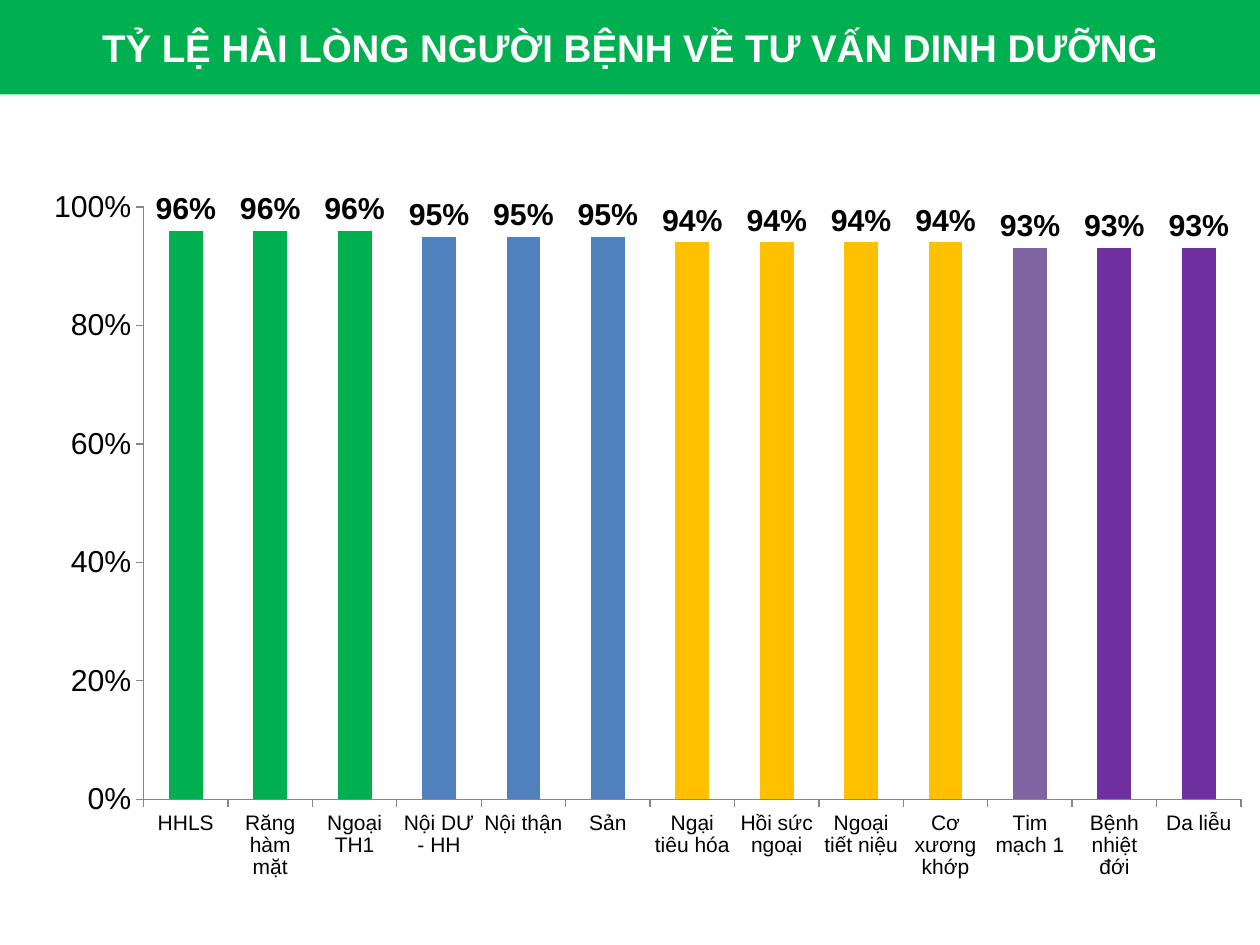
from lxml import etree
from pptx import Presentation
from pptx.chart.data import CategoryChartData
from pptx.dml.color import RGBColor
from pptx.enum.chart import XL_CHART_TYPE, XL_LABEL_POSITION, XL_TICK_MARK
from pptx.enum.text import MSO_ANCHOR, PP_ALIGN
from pptx.oxml.ns import qn
from pptx.util import Inches, Pt

TITLE = "TỶ LỆ HÀI LÒNG NGƯỜI BỆNH VỀ TƯ VẤN DINH DƯỠNG"
COLORS = {
    "green": "00B050", "blue": "4F81BD", "amber": "FFC000", "mauve": "8064A2",
    "purple": "7030A0", "white": "FFFFFF", "black": "000000", "axis": "868686",
}
DEPARTMENTS = [
    ("HHLS", 0.96, "green"),
    ("Răng hàm mặt", 0.96, "green"),
    ("Ngoại TH1", 0.96, "green"),
    ("Nội DƯ - HH", 0.95, "blue"),
    ("Nội thận", 0.95, "blue"),
    ("Sản", 0.95, "blue"),
    ("Ngại tiêu hóa", 0.94, "amber"),
    ("Hồi sức ngoại", 0.94, "amber"),
    ("Ngoại tiết niệu", 0.94, "amber"),
    ("Cơ xương khớp", 0.94, "amber"),
    ("Tim mạch 1", 0.93, "mauve"),
    ("Bệnh nhiệt đới", 0.93, "purple"),
    ("Da liễu", 0.93, "purple"),
]
PLOT_AREA = {"x": 0.114, "y": 0.07, "w": 0.871, "h": 0.797}
FONT = "Arial"


def color(name):
    return RGBColor.from_string(COLORS[name])


def set_font(font, size, color_name, bold=False, name=FONT):
    font.name, font.size, font.bold = name, Pt(size), bold
    font.color.rgb = color(color_name)


def fill_solid(target, color_name):
    target.fill.solid()
    target.fill.fore_color.rgb = color(color_name)


def add_title(slide):
    title = slide.shapes.title
    title.left, title.top = Inches(0), Inches(0)
    title.width, title.height = Inches(10), Inches(0.75)
    fill_solid(title, "green")
    title.text_frame.text = TITLE
    title.text_frame.word_wrap = True
    title.text_frame.vertical_anchor = MSO_ANCHOR.MIDDLE
    paragraph = title.text_frame.paragraphs[0]
    paragraph.alignment = PP_ALIGN.CENTER
    set_font(paragraph.font, 22, "white", bold=True)


def format_axis(axis, size):
    axis.has_major_gridlines = False
    axis.major_tick_mark = XL_TICK_MARK.OUTSIDE
    axis.minor_tick_mark = XL_TICK_MARK.NONE
    axis.format.line.color.rgb = color("axis")
    axis.format.line.width = Pt(0.75)
    set_font(axis.tick_labels.font, size, "black")


def place_plot_area(chart):
    """Fix the inner plot area as fractions of the chart frame."""
    plot_area = chart.element.find(".//" + qn("c:plotArea"))
    layout = plot_area.find(qn("c:layout"))
    if layout is None:
        layout = etree.Element(qn("c:layout"))
        plot_area.insert(0, layout)
    manual = etree.SubElement(layout, qn("c:manualLayout"))
    settings = {"layoutTarget": "inner", "xMode": "edge", "yMode": "edge", **PLOT_AREA}
    for tag, value in settings.items():
        etree.SubElement(manual, qn("c:" + tag)).set("val", str(value))


def add_satisfaction_chart(slide):
    data = CategoryChartData(number_format="0%")
    data.categories = [name for name, _, _ in DEPARTMENTS]
    data.add_series("Series 1", [rate for _, rate, _ in DEPARTMENTS])
    chart = slide.shapes.add_chart(
        XL_CHART_TYPE.COLUMN_CLUSTERED,
        Inches(0), Inches(1.23), Inches(10), Inches(5.9), data,
    ).chart
    chart.has_legend = False
    chart.has_title = False
    set_font(chart.font, 17.3, "black", name="Calibri")
    place_plot_area(chart)

    format_axis(chart.category_axis, 12)
    value_axis = chart.value_axis
    format_axis(value_axis, 17.3)
    value_axis.minimum_scale, value_axis.maximum_scale = 0, 1
    value_axis.major_unit = 0.2
    value_axis.tick_labels.number_format = "0%"
    value_axis.tick_labels.number_format_is_linked = False

    plot = chart.plots[0]
    plot.gap_width = 150
    plot.vary_by_categories = False
    series = plot.series[0]
    fill_solid(series.format, "blue")
    for index, (_, _, color_name) in enumerate(DEPARTMENTS):
        fill_solid(series.points[index].format, color_name)

    labels = series.data_labels
    labels.show_value = True
    labels.number_format = "0%"
    labels.number_format_is_linked = False
    labels.position = XL_LABEL_POSITION.OUTSIDE_END
    set_font(labels.font, 17.3, "black", bold=True)


def main():
    presentation = Presentation()
    presentation.slide_width, presentation.slide_height = Inches(10), Inches(7.5)
    slide = presentation.slides.add_slide(presentation.slide_layouts[5])
    add_title(slide)
    add_satisfaction_chart(slide)
    presentation.save("out.pptx")


if __name__ == "__main__":
    main()
